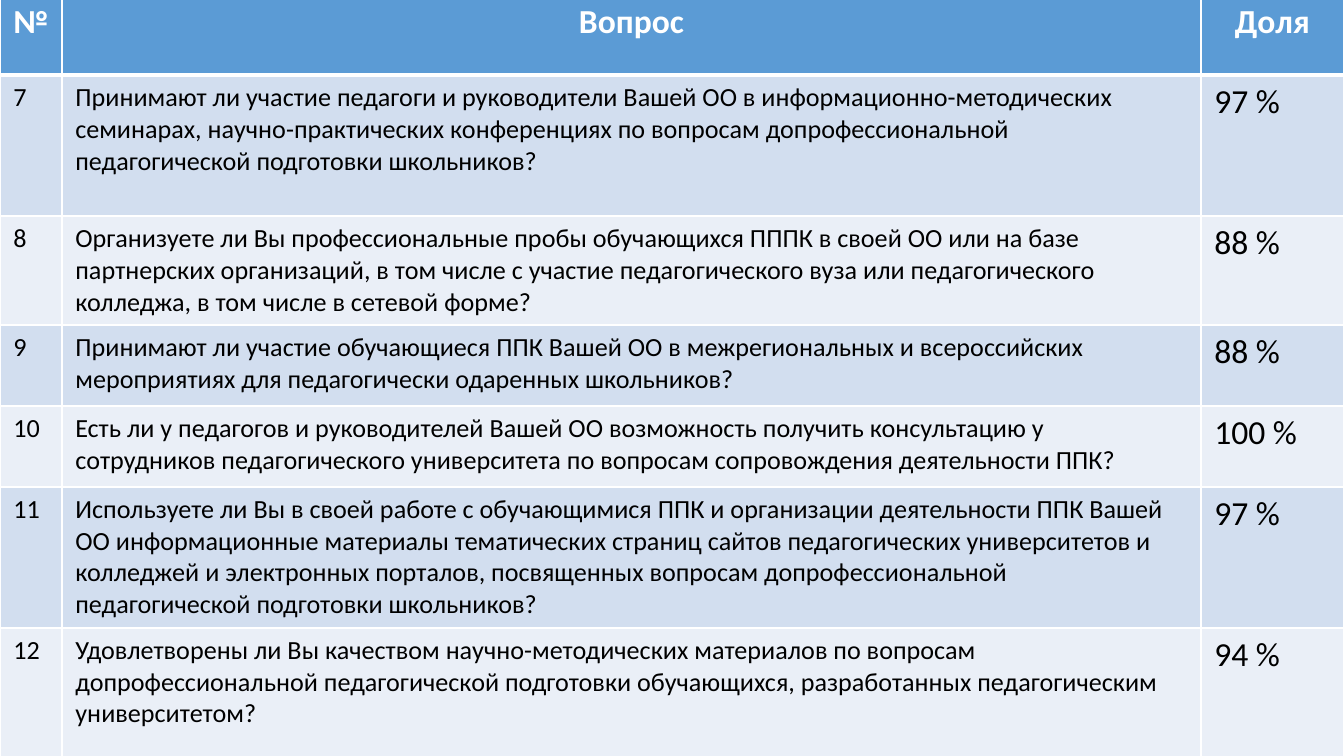
from lxml.etree import SubElement
from pptx import Presentation
from pptx.dml.color import RGBColor
from pptx.enum.text import PP_ALIGN
from pptx.oxml.ns import qn
from pptx.util import Pt

PX = 914400 / 134.4
WHITE = RGBColor(0xFF, 0xFF, 0xFF)
BLACK = RGBColor(0, 0, 0)
HEADER_BLUE = RGBColor(0x5B, 0x9B, 0xD5)
BANDS = [RGBColor(0xD2, 0xDE, 0xEF), RGBColor(0xEA, 0xEF, 0xF7)]
FONT = "Calibri"

HEADER = ("№", "Вопрос", "Доля")
QUESTIONS = [
    ("7", "Принимают ли участие педагоги и руководители Вашей ОО в информационно-методических "
          "семинарах, научно-практических конференциях по вопросам допрофессиональной "
          "педагогической подготовки школьников?", "97 %"),
    ("8", "Организуете ли Вы профессиональные пробы обучающихся ПППК в своей ОО или на базе "
          "партнерских организаций, в том числе с участие педагогического вуза или педагогического "
          "колледжа, в том числе в сетевой форме?", "88 %"),
    ("9", "Принимают ли участие обучающиеся ППК Вашей ОО в межрегиональных и всероссийских "
          "мероприятиях для педагогически одаренных школьников?", "88 %"),
    ("10", "Есть ли у педагогов и руководителей Вашей ОО возможность получить консультацию у "
           "сотрудников педагогического университета по вопросам сопровождения деятельности ППК?",
     "100 %"),
    ("11", "Используете ли Вы в своей работе с обучающимися ППК и организации деятельности ППК Вашей "
           "ОО информационные материалы тематических страниц сайтов педагогических университетов и "
           "колледжей и электронных порталов, посвященных вопросам допрофессиональной "
           "педагогической подготовки школьников?", "97 %"),
    ("12", "Удовлетворены ли Вы качеством научно-методических материалов по вопросам "
           "допрофессиональной педагогической подготовки обучающихся, разработанных педагогическим "
           "университетом?", "94 %"),
]
COL_WIDTHS = [62, 1139, 143]
ROW_HEIGHTS = [80, 141, 109, 81, 81, 141, 134]
TOP = -5
BODY_SIZES = [14, 14, 18]
HEADER_ALIGN = [PP_ALIGN.LEFT, PP_ALIGN.CENTER, PP_ALIGN.CENTER]


def px(n):
    return round(n * PX)


def set_borders(cell, top, bottom):
    """Draw white borders; top and bottom widths are in points."""
    tcPr = cell._tc.get_or_add_tcPr()
    for tag, width in (("a:lnL", 1), ("a:lnR", 1), ("a:lnT", top), ("a:lnB", bottom)):
        ln = SubElement(tcPr, qn(tag), w=str(Pt(width)))
        fill = SubElement(ln, qn("a:solidFill"))
        SubElement(fill, qn("a:srgbClr"), val=str(WHITE))


def fill_cell(cell, text, size, color, bold, align, fill):
    cell.fill.solid()
    cell.fill.fore_color.rgb = fill
    p = cell.text_frame.paragraphs[0]
    p.alignment = align
    r = p.add_run()
    r.text = text
    r.font.name = FONT
    r.font.size = Pt(size)
    r.font.bold = bold
    r.font.color.rgb = color


prs = Presentation()
prs.slide_width, prs.slide_height = px(1344), px(756)
slide = prs.slides.add_slide(prs.slide_layouts[6])

rows = [HEADER] + QUESTIONS
table = slide.shapes.add_table(len(rows), len(HEADER), 0, px(TOP),
                               px(sum(COL_WIDTHS)), px(sum(ROW_HEIGHTS))).table
for column, width in zip(table.columns, COL_WIDTHS):
    column.width = px(width)
for row, height in zip(table.rows, ROW_HEIGHTS):
    row.height = px(height)

for i, texts in enumerate(rows):
    for j, text in enumerate(texts):
        cell = table.cell(i, j)
        set_borders(cell, top=3 if i == 1 else 1, bottom=3 if i == 0 else 1)
        if i == 0:
            fill_cell(cell, text, 18, WHITE, True, HEADER_ALIGN[j], HEADER_BLUE)
        else:
            fill_cell(cell, text, BODY_SIZES[j], BLACK, False, PP_ALIGN.LEFT, BANDS[(i - 1) % 2])

prs.save("out.pptx")
